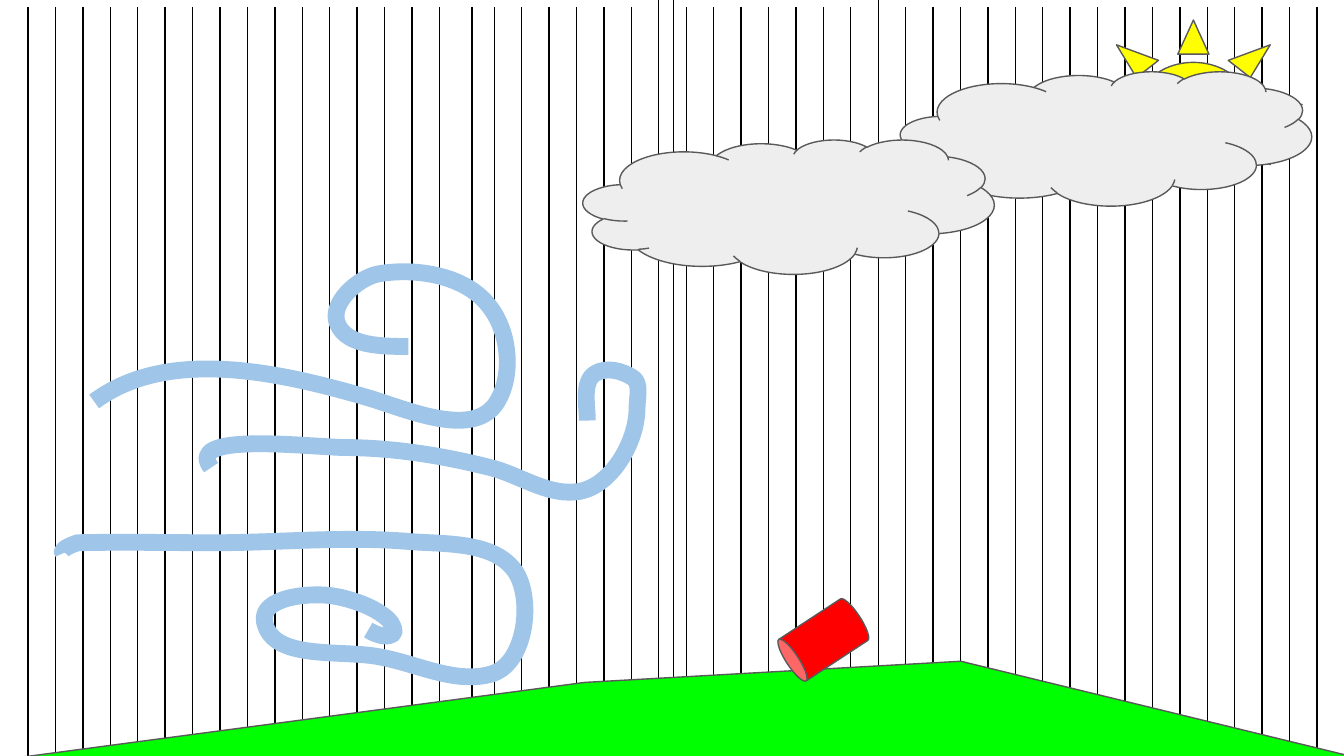
import lxml.etree
import pptx
import pptx.dml.color
import pptx.enum.shapes
import pptx.oxml.ns
import pptx.util
from dataclasses import dataclass


@dataclass(frozen=True)
class Theme:
    outline: str = "595959"
    stripe: str = "000000"
    sun: str = "FFFF00"
    grass: str = "00FF00"
    cloud: str = "EEEEEE"
    wind: str = "9FC5E8"
    can: str = "FF0000"
    thin: float = 0.75
    thick: float = 9


theme = Theme()
SLIDE_WIDTH, SLIDE_HEIGHT = 25.4, 14.29

STRIPE_COUNT, FIRST_STRIPE, LAST_STRIPE, STRIPE_TOP = 48, 0.53, 24.89, 0.13
SHIFTED_STRIPES = {16: 8.92}
FULL_HEIGHT_STRIPES = {23, 31}
CENTRE_STRIPE = 12.73

SUN = ("SUN", (20.5, 0.38, 4.11, 3.2), theme.sun, 0)
CLOUDS = [
    ("CLOUD", (17.02, 1.35, 7.77, 2.54), theme.cloud, 0),
    ("CLOUD", (11.02, 2.64, 7.77, 2.54), theme.cloud, 0),
]
CAN = ("CAN", (15.09, 11.28, 0.94, 1.63), theme.can, 236.7)

GROUND = [(0.13, 14.35), (11.05, 12.9), (18.16, 12.5), (25.96, 14.4)]

GUSTS = [
    [
        (1.78, 7.59),
        (3.18, 6.55), (5.31, 7.04), (6.96, 7.52),
        (7.72, 7.75), (8.97, 8.31), (9.4, 7.59),
        (9.7, 7.09), (9.63, 6.3), (9.27, 5.82),
        (8.84, 5.21), (7.87, 5.05), (7.14, 5.18),
        (6.76, 5.26), (6.22, 5.74), (6.38, 6.12),
        (6.55, 6.55), (7.24, 6.55), (7.72, 6.55),
    ],
    [
        (3.99, 8.84),
        (3.48, 8.18), (5.64, 8.43), (6.48, 8.46),
        (7.42, 8.46), (8.36, 8.61), (9.27, 8.84),
        (9.8, 8.97), (10.31, 9.35), (10.87, 9.3),
        (11.53, 9.25), (12.04, 8.36), (12.04, 7.72),
        (12.04, 7.52), (12.12, 7.24), (11.96, 7.14),
        (11.76, 7.01), (11.46, 6.93), (11.25, 7.06),
        (11, 7.21), (11.1, 7.65), (11.1, 7.95),
    ],
    [
        (1.19, 10.46),
        (1.12, 10.39), (1.37, 10.29), (1.47, 10.26),
        (2.34, 10.24), (3.18, 10.26), (4.04, 10.26),
        (5.28, 10.26), (6.53, 10.13), (7.77, 10.24),
        (8.46, 10.29), (9.37, 10.24), (9.75, 10.82),
        (10.08, 11.35), (9.93, 12.52), (9.32, 12.73),
        (8.64, 12.95), (7.9, 12.55), (7.19, 12.42),
        (6.45, 12.27), (5.16, 12.5), (5, 11.76),
        (4.9, 11.28), (5.89, 11.18), (6.38, 11.28),
        (6.71, 11.35), (7.09, 11.48), (7.34, 11.71),
        (7.42, 11.79), (7.49, 11.94), (7.42, 11.99),
        (7.29, 12.07), (7.09, 11.99), (6.96, 11.91),
    ],
]


def colour(code):
    return pptx.dml.color.RGBColor.from_string(code)


def set_line(item, code, width):
    item.line.color.rgb = colour(code)
    item.line.width = pptx.util.Pt(width)


def set_fill(shape, code):
    shape.shadow.inherit = False
    shape.fill.solid()
    shape.fill.fore_color.rgb = colour(code)


def add_stripe(slide, x, top):
    ends = [pptx.util.Cm(value) for value in (x, top, x, SLIDE_HEIGHT)]
    connector = slide.shapes.add_connector(pptx.enum.shapes.MSO_CONNECTOR.STRAIGHT, *ends)
    set_line(connector, theme.stripe, theme.thin)
    lxml.etree.SubElement(connector.element.spPr, pptx.oxml.ns.qn("a:effectLst"))


def add_preset(slide, kind, frame, fill, rotation):
    preset = getattr(pptx.enum.shapes.MSO_SHAPE, kind)
    shape = slide.shapes.add_shape(preset, *[pptx.util.Cm(value) for value in frame])
    shape.rotation = rotation
    set_fill(shape, fill)
    set_line(shape, theme.outline, theme.thin)


def add_outline(slide, points):
    start, *others = [(pptx.util.Cm(x), pptx.util.Cm(y)) for x, y in points]
    builder = slide.shapes.build_freeform(*start)
    builder.add_line_segments(others, close=False)
    return builder.convert_to_shape()


def add_ground(slide):
    shape = add_outline(slide, GROUND)
    set_fill(shape, theme.grass)
    set_line(shape, theme.outline, theme.thin)


def add_gust(slide, points):
    shape = add_outline(slide, points)
    segments = list(shape.element.iter(pptx.oxml.ns.qn("a:lnTo")))
    outline = segments[0].getparent()
    for first in range(0, len(segments), 3):
        curve = lxml.etree.SubElement(outline, pptx.oxml.ns.qn("a:cubicBezTo"))
        for segment in segments[first:first + 3]:
            curve.append(segment[0])
            outline.remove(segment)
    shape.shadow.inherit = False
    shape.fill.background()
    set_line(shape, theme.wind, theme.thick)


def main():
    presentation = pptx.Presentation()
    presentation.slide_width = pptx.util.Cm(SLIDE_WIDTH)
    presentation.slide_height = pptx.util.Cm(SLIDE_HEIGHT)
    slide = presentation.slides.add_slide(presentation.slide_layouts[6])

    gap = (LAST_STRIPE - FIRST_STRIPE) / (STRIPE_COUNT - 1)
    for index in range(STRIPE_COUNT):
        x = SHIFTED_STRIPES.get(index, FIRST_STRIPE + index * gap)
        add_stripe(slide, x, 0 if index in FULL_HEIGHT_STRIPES else STRIPE_TOP)
    add_stripe(slide, CENTRE_STRIPE, 0)

    add_preset(slide, *SUN)
    add_ground(slide)
    for cloud in CLOUDS:
        add_preset(slide, *cloud)
    for gust in GUSTS:
        add_gust(slide, gust)
    add_preset(slide, *CAN)

    presentation.save("out.pptx")


if __name__ == "__main__":
    main()
